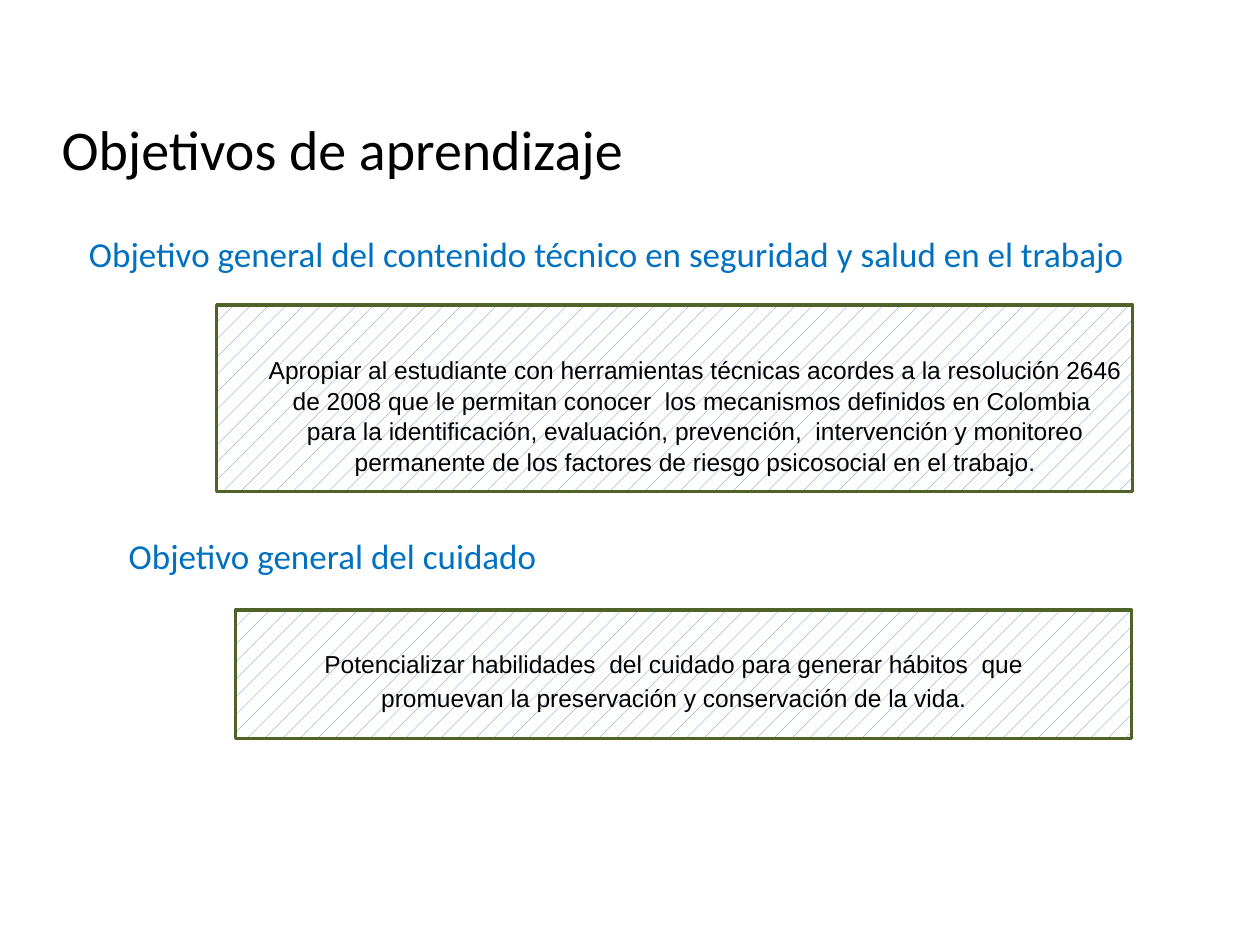
from pptx import Presentation
from pptx.dml.color import RGBColor
from pptx.enum.dml import MSO_PATTERN
from pptx.enum.shapes import MSO_SHAPE
from pptx.enum.text import PP_ALIGN
from pptx.util import Inches, Pt

RECTANGLE = MSO_SHAPE.RECTANGLE
DOTS = MSO_PATTERN.PERCENT_5
LEFT, CENTER = PP_ALIGN.LEFT, PP_ALIGN.CENTER
COLORS = {
    "title": "000000",
    "heading": "0070C0",
    "body": "000000",
    "pattern": "4F81BD",
    "paper": "FFFFFF",
    "border": "4F6228",
}

presentation = Presentation()
presentation.slide_width = Inches(10)
presentation.slide_height = Inches(7.5)
slide = presentation.slides.add_slide(presentation.slide_layouts[6])

# Grid of 100 columns by 100 rows
column = presentation.slide_width / 100
row = presentation.slide_height / 100


def place(left, top, width, height):
    return [round(size) for size in
            (left * column, top * row, width * column, height * row)]


def color(name):
    return RGBColor.from_string(COLORS[name])


# Patterned frames behind the two objectives
for area in [(17.2, 32.27, 72.7, 19.73), (18.7, 64.53, 71.1, 13.6)]:
    frame = slide.shapes.add_shape(RECTANGLE, *place(*area))
    frame.shadow.inherit = False
    frame.fill.patterned()
    frame.fill.pattern = DOTS
    frame.fill.fore_color.rgb = color("pattern")
    frame.fill.back_color.rgb = color("paper")
    frame.line.color.rgb = color("border")
    frame.line.width = Pt(2)

# Title, headings and objectives: area, style, alignment, line spacing, text
styles = {"title": ("Calibri", 32), "heading": ("Calibri", 20), "body": ("Arial", 14)}
texts = [
    ((3.9, 11.47, 47.3, 16.67), "title", LEFT, 1.0, "Objetivos de aprendizaje"),
    ((4.7, 24, 87.5, 5.87), "heading", CENTER, 1.0,
     "Objetivo general del contenido técnico en seguridad y salud en el trabajo "),
    ((20.3, 36.8, 69.8, 13.6), "body", CENTER, 1.04,
     "Apropiar al estudiante con herramientas técnicas acordes a la resolución 2646 "
     "de 2008 que le permitan conocer  los mecanismos definidos en Colombia  "
     "para la identificación, evaluación, prevención,  intervención y monitoreo "
     "permanente de los factores de riesgo psicosocial en el trabajo."),
    ((5.5, 55.2, 41.8, 6.53), "heading", CENTER, 1.15, "Objetivo general del cuidado"),
    ((20.3, 67.6, 66.4, 8.5), "body", CENTER, 1.15,
     "Potencializar habilidades  del cuidado para generar hábitos  que "
     "promuevan la preservación y conservación de la vida."),
]
for area, style, alignment, spacing, text in texts:
    text_frame = slide.shapes.add_textbox(*place(*area)).text_frame
    text_frame.word_wrap = style != "title"
    paragraph = text_frame.paragraphs[0]
    paragraph.alignment = alignment
    paragraph.line_spacing = spacing
    run = paragraph.add_run()
    run.text = text
    font_name, font_size = styles[style]
    run.font.name = font_name
    run.font.size = Pt(font_size)
    run.font.color.rgb = color(style)

presentation.save("out.pptx")
